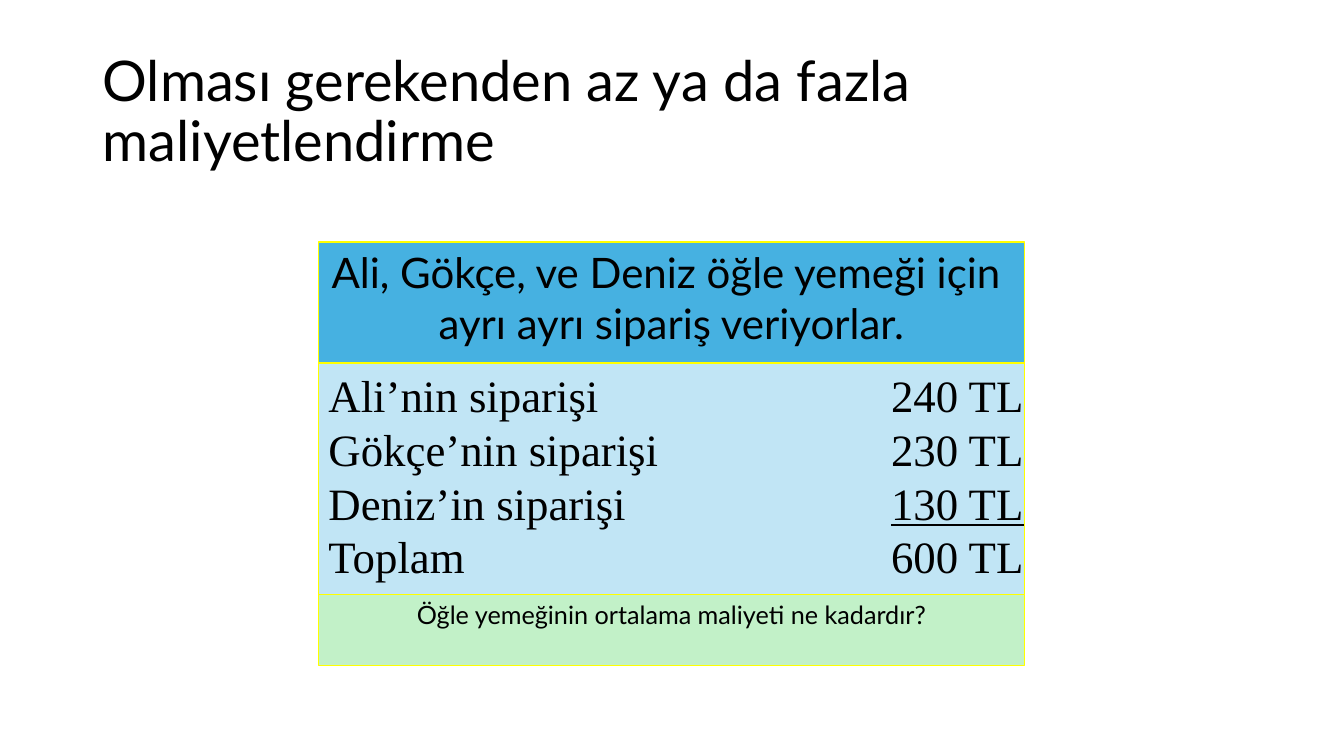
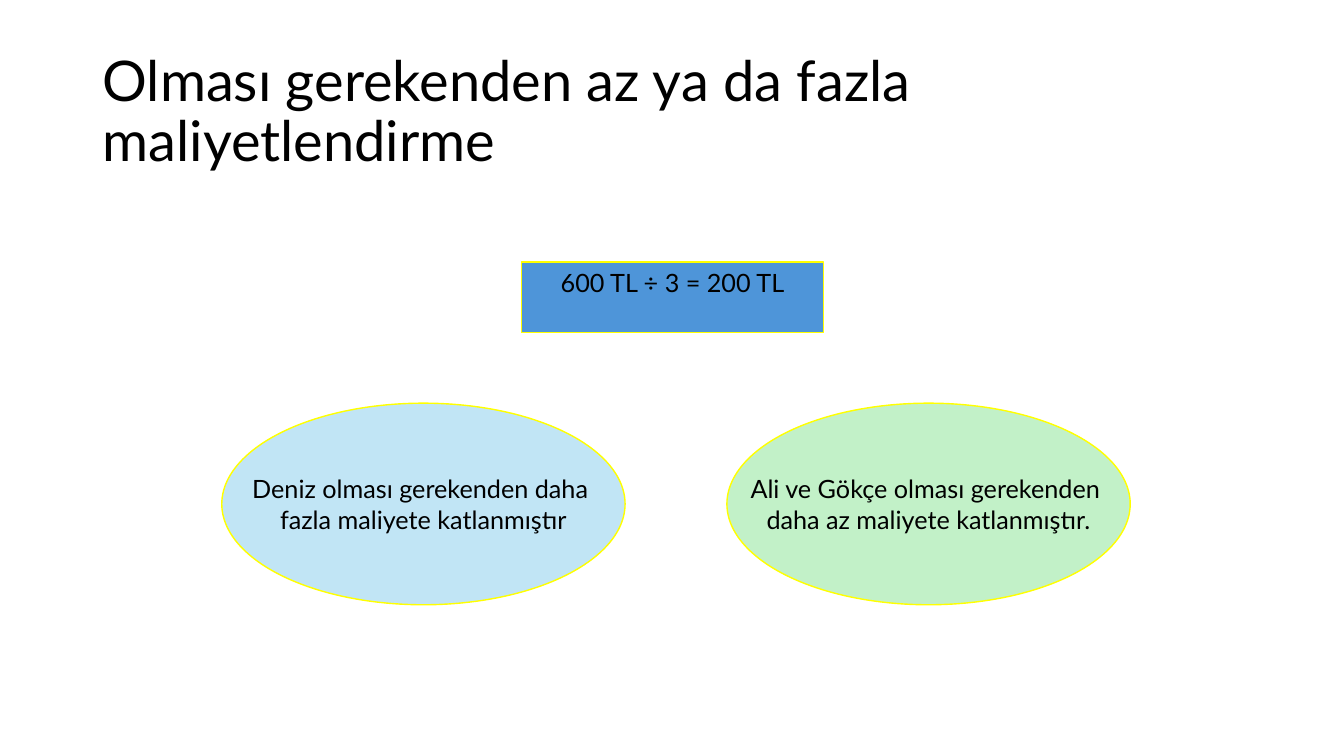
from dataclasses import dataclass

from lxml import etree
from pptx import Presentation
from pptx.dml.color import RGBColor
from pptx.enum.shapes import MSO_SHAPE
from pptx.enum.text import MSO_ANCHOR, PP_ALIGN
from pptx.oxml.ns import qn
from pptx.slide import Slide
from pptx.text.text import TextFrame
from pptx.util import Inches, Pt

RECTANGLE, ELLIPSE = MSO_SHAPE.RECTANGLE, MSO_SHAPE.OVAL
TOP, MIDDLE = MSO_ANCHOR.TOP, MSO_ANCHOR.MIDDLE
LEFT, CENTER = PP_ALIGN.LEFT, PP_ALIGN.CENTER

BLACK = RGBColor(0x00, 0x00, 0x00)
YELLOW = RGBColor(0xFF, 0xFF, 0x00)
SKY_BLUE = RGBColor(0x46, 0xB1, 0xE1)
MID_BLUE = RGBColor(0x4E, 0x95, 0xD9)
PALE_BLUE = RGBColor(0xC1, 0xE5, 0xF5)
PALE_GREEN = RGBColor(0xC2, 0xF1, 0xC8)

TITLE = "Olması gerekenden az ya da fazla maliyetlendirme"
TITLE_FORMAT = {"name": "Lato", "size": Pt(40)}
HEADING_FORMAT = {"name": "Lato", "size": Pt(30)}
BODY_FORMAT = {"name": "Lato", "size": Pt(18)}
ORDER_FORMAT = {"name": "Times New Roman", "size": Pt(32)}
TAB_FORMAT = {"name": "Lato", "size": Pt(32)}
UNDERLINED_FORMAT = {**ORDER_FORMAT, "underline": True}
AMOUNT_TAB = Inches(5.58)


@dataclass(frozen=True)
class Span:
    text: str
    values: dict


@dataclass(frozen=True)
class Panel:
    left: float
    top: float
    width: float
    height: float
    fill: RGBColor
    lines: list[list[Span]]
    kind: MSO_SHAPE = RECTANGLE
    anchor: MSO_ANCHOR = TOP
    align: PP_ALIGN = CENTER
    tab: int | None = None


def text_lines(values: dict, *texts: str) -> list[list[Span]]:
    return [[Span(text, values)] for text in texts]


def order_line(label: str, amount: str, amount_format: dict = ORDER_FORMAT) -> list[Span]:
    return [Span(label, ORDER_FORMAT), Span("\t", TAB_FORMAT), Span(amount, amount_format)]


def write_lines(frame: TextFrame, lines: list[list[Span]], align: PP_ALIGN,
                tab: int | None = None) -> None:
    for index, line in enumerate(lines):
        para = frame.add_paragraph() if index else frame.paragraphs[0]
        para.alignment = align
        if tab is not None:
            tab_list = etree.SubElement(para._p.get_or_add_pPr(), qn("a:tabLst"))
            etree.SubElement(tab_list, qn("a:tab"), pos=str(tab), algn="l")
        for span in line:
            run = para.add_run()
            run.text = span.text
            run.font.color.rgb = BLACK
            for name, value in span.values.items():
                setattr(run.font, name, value)


def add_title(page: Slide) -> None:
    box = page.shapes.add_textbox(Inches(0.92), Inches(0.4), Inches(11.5), Inches(1.45))
    frame = box.text_frame
    frame.word_wrap = True
    frame.vertical_anchor = MIDDLE
    write_lines(frame, text_lines(TITLE_FORMAT, TITLE), LEFT)
    frame.paragraphs[0].line_spacing = 0.9


def add_panel(page: Slide, panel: Panel) -> None:
    box = page.shapes.add_shape(panel.kind, Inches(panel.left), Inches(panel.top),
                                Inches(panel.width), Inches(panel.height))
    box.shadow.inherit = False
    box.fill.solid()
    box.fill.fore_color.rgb = panel.fill
    box.line.color.rgb = YELLOW
    box.line.width = Pt(1)
    box.text_frame.word_wrap = False
    box.text_frame.vertical_anchor = panel.anchor
    write_lines(box.text_frame, panel.lines, panel.align, panel.tab)


# Lunch orders, stacked in one column
ORDERS = [
    Panel(3.16, 2.4, 7, 1.2, SKY_BLUE, text_lines(
        HEADING_FORMAT, "Ali, Gökçe, ve Deniz öğle yemeği için ",
        "ayrı ayrı sipariş veriyorlar.")),
    Panel(3.16, 3.6, 7, 2.3, PALE_BLUE, [
        order_line("Ali’nin siparişi", "240 TL"),
        order_line("Gökçe’nin siparişi", "230 TL"),
        order_line("Deniz’in siparişi", "130 TL", UNDERLINED_FORMAT),
        order_line("Toplam", "600 TL"),
    ], align=LEFT, tab=AMOUNT_TAB),
    Panel(3.16, 5.9, 7, 0.7, PALE_GREEN, text_lines(
        BODY_FORMAT, "Öğle yemeğinin ortalama maliyeti ne kadardır?")),
]

# Average cost and what it means for each person
AVERAGE = [
    Panel(5.17, 2.6, 3, 0.7, MID_BLUE, text_lines(BODY_FORMAT, "600 TL ÷ 3 = 200 TL")),
    Panel(2.2, 4, 4, 2, PALE_BLUE, text_lines(
        BODY_FORMAT, "Deniz olması gerekenden daha ", "fazla maliyete katlanmıştır"),
        kind=ELLIPSE, anchor=MIDDLE),
    Panel(7.21, 4, 4, 2, PALE_GREEN, text_lines(
        BODY_FORMAT, "Ali ve Gökçe olması gerekenden ", "daha az maliyete katlanmıştır."),
        kind=ELLIPSE, anchor=MIDDLE),
]


def main() -> None:
    deck = Presentation()
    deck.slide_width, deck.slide_height = Inches(13.33), Inches(7.5)
    blank = deck.slide_layouts[6]
    for panels in (ORDERS, AVERAGE):
        page = deck.slides.add_slide(blank)
        add_title(page)
        for panel in panels:
            add_panel(page, panel)
    deck.save("out.pptx")


if __name__ == "__main__":
    main()
